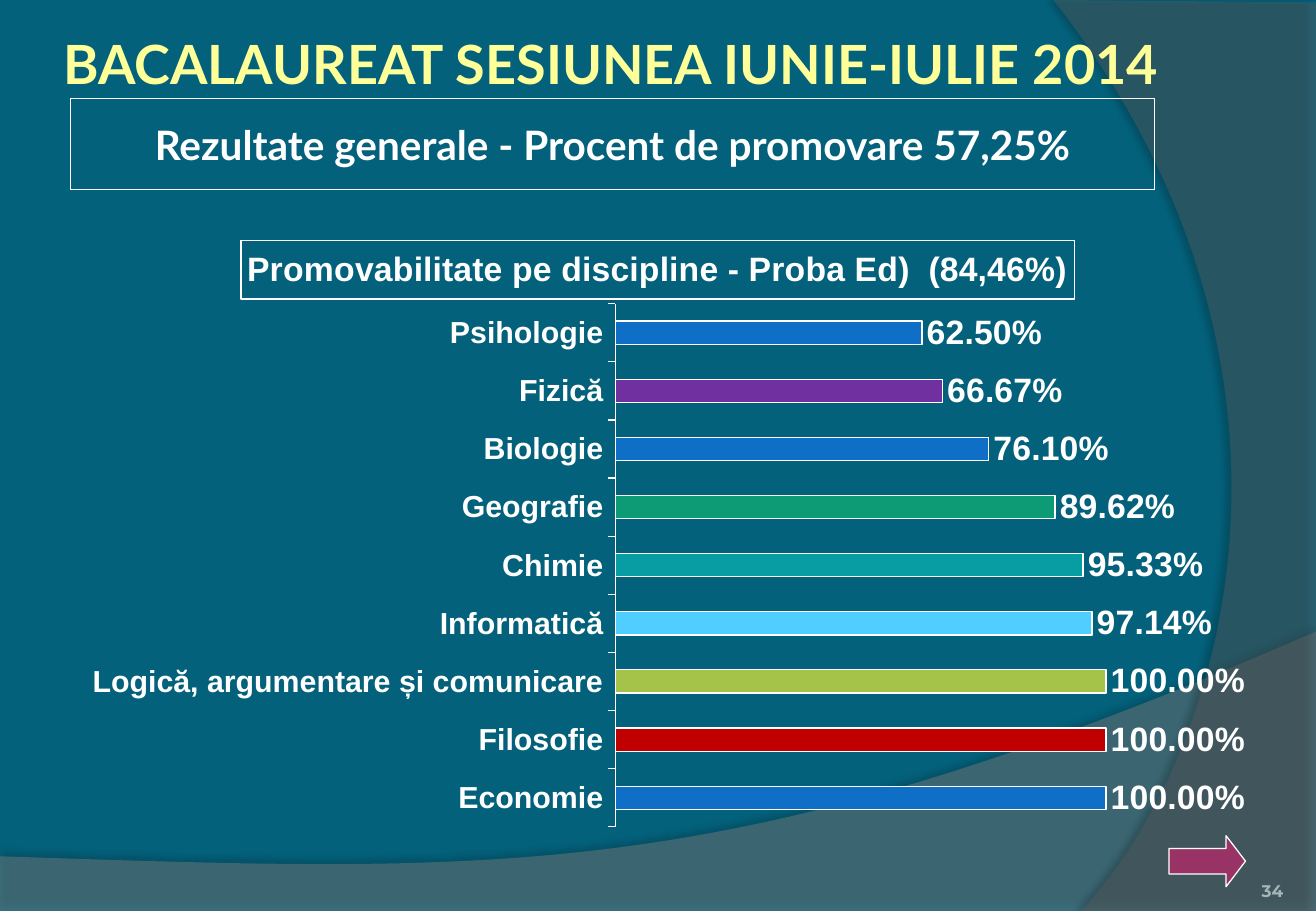
from lxml.etree import SubElement
from pptx import Presentation
from pptx.chart.data import CategoryChartData
from pptx.dml.color import RGBColor
from pptx.enum.chart import (XL_CHART_TYPE, XL_LABEL_POSITION,
                             XL_TICK_LABEL_POSITION, XL_TICK_MARK)
from pptx.enum.shapes import MSO_SHAPE
from pptx.enum.text import MSO_ANCHOR, PP_ALIGN
from pptx.oxml.ns import qn
from pptx.util import Inches, Pt

WHITE = "FFFFFF"
RESULTS = [  # subject, pass rate, bar colour
    ("Economie", 1, "0F6FC6"),
    ("Filosofie", 1, "C00000"),
    ("Logică, argumentare și comunicare", 1, "A5C249"),
    ("Informatică", 0.9714, "4FCEFF"),
    ("Chimie", 0.9533, "089CA3"),
    ("Geografie", 0.8962, "0C9B74"),
    ("Biologie", 0.761, "0F6FC6"),
    ("Fizică", 0.6667, "7030A0"),
    ("Psihologie", 0.625, "0F6FC6"),
]


def color(code):
    return RGBColor.from_string(code)


def paint(item, fill=None, line=None):
    if fill:
        item.fill.solid()
        item.fill.fore_color.rgb = color(fill)
    else:
        item.fill.background()
    if line:
        item.line.color.rgb = color(line)
        item.line.width = Pt(0.75)
    else:
        item.line.fill.background()


def style(font, size, face="Arial", bold=True, ink=WHITE):
    font.size, font.name, font.bold = Pt(size), face, bold
    font.color.rgb = color(ink)


def write(shape, text, size, face="Lato", ink=WHITE, align=PP_ALIGN.LEFT,
          anchor=MSO_ANCHOR.TOP, inset=0.05):
    frame = shape.text_frame
    frame.word_wrap = True
    frame.vertical_anchor = anchor
    frame.margin_left = frame.margin_right = Inches(inset)
    frame.margin_top = frame.margin_bottom = Inches(0.05 if inset else 0)
    para = frame.paragraphs[0]
    para.alignment = align
    run = para.add_run()
    run.text = text
    style(run.font, size, face, ink=ink)


def add_box(slide, box, kind=MSO_SHAPE.RECTANGLE, fill=None, line=None):
    shape = slide.shapes.add_shape(kind, *map(Inches, box))
    shape.shadow.inherit = False
    paint(shape, fill, line)
    return shape


def curve(a, b, c, d, steps=60):
    """Points along a cubic curve, without its start."""
    for i in range(1, steps + 1):
        t = i / steps
        u = 1 - t
        yield tuple(u**3 * p + 3 * u * u * t * q + 3 * u * t * t * r + t**3 * s
                    for p, q, r, s in zip(a, b, c, d))


def add_wave(slide, box, points, fill, alpha, shade, dist, angle):
    """Translucent outline; points are relative to the box corner."""
    left, top = box
    spots = [(Inches(left + x), Inches(top + y)) for x, y in points]
    pen = slide.shapes.build_freeform(*spots[0])
    pen.add_line_segments(spots[1:], close=True)
    shape = pen.convert_to_shape()
    shape.shadow.inherit = False
    paint(shape, fill)
    props = shape.element.spPr
    tint = props.find(qn("a:solidFill"))[0]
    SubElement(tint, qn("a:alpha"), val=str(alpha * 1000))
    cast = SubElement(props.find(qn("a:effectLst")), qn("a:outerShdw"),
                      blurRad=str(Pt(4)), dist=str(Pt(dist)),
                      dir=str(angle * 60000), algn="ctr", rotWithShape="0")
    dark = SubElement(cast, qn("a:srgbClr"), val="000000")
    SubElement(dark, qn("a:alpha"), val=str(shade * 1000))


def add_decor(slide):
    # Bottom wave
    low = [(0, 1.85), (0, 2.3), (10.83, 2.3), (10.83, 0)]
    low += curve((10.83, 0), (6.06, 2.09), (4.23, 1.99), (0, 1.85))
    add_wave(slide, (0, 5.2), low, "7F7F7F", 45, 35, 3.5, 270)
    # Right wave
    side = [(2.16, 0.02), (2.16, 7.5), (0.23, 7.5)]
    side += curve((0.23, 7.5), (1.45, 6.19), (2.35, 3), (0, 0))
    add_wave(slide, (8.67, 0), side, "5E5E5E", 40, 45, 4, 180)


def add_head(slide, left, top, width):
    title = slide.shapes.add_textbox(*map(Inches, (left, top, width, 0.63)))
    write(title, "BACALAUREAT SESIUNEA IUNIE-IULIE 2014", 32,
          ink="FFFF99", inset=0.1)
    band = add_box(slide, (left + 0.16, top + 0.61, 8.92, 0.75), line=WHITE)
    write(band, "Rezultate generale - Procent de promovare 57,25%", 24,
          align=PP_ALIGN.CENTER, anchor=MSO_ANCHOR.MIDDLE)


def set_place(parent, index, **sizes):
    """Fix a chart part at fractions of the chart area."""
    old = parent.find(qn("c:layout"))
    if old is not None:
        parent.remove(old)
    layout = SubElement(parent, qn("c:layout"))
    parent.insert(index, layout)
    place = SubElement(layout, qn("c:manualLayout"))
    if "w" in sizes:
        SubElement(place, qn("c:layoutTarget"), val="inner")
    for key in ("x", "y"):
        SubElement(place, qn(f"c:{key}Mode"), val="edge")
    for key, value in sizes.items():
        SubElement(place, qn(f"c:{key}"), val=str(value))


def add_bars(slide, box):
    names, rates, inks = zip(*RESULTS)
    data = CategoryChartData(number_format="0.00%")
    data.categories = names
    data.add_series("Series 1", rates)
    chart = slide.shapes.add_chart(XL_CHART_TYPE.BAR_CLUSTERED,
                                   *map(Inches, box), data).chart
    style(chart.font, 10, bold=False)
    chart.has_legend = False

    # Title
    chart.has_title = True
    title = chart.chart_title
    title.include_in_layout = False
    para = title.text_frame.paragraphs[0]
    run = para.add_run()
    run.text = "Promovabilitate pe discipline - Proba Ed)  (84,46%)"
    style(run.font, 20)
    paint(title.format, line=WHITE)
    set_place(title.format.element if hasattr(title.format, "element")
              else chart.element.find(".//" + qn("c:title")), 1,
              x=0.14, y=0.03)

    # Axes
    cats = chart.category_axis
    style(cats.tick_labels.font, 18)
    cats.major_tick_mark = XL_TICK_MARK.OUTSIDE
    cats.format.line.color.rgb = color(WHITE)
    rate = chart.value_axis
    rate.minimum_scale, rate.maximum_scale = 0, 1.2
    rate.has_major_gridlines = False
    rate.tick_label_position = XL_TICK_LABEL_POSITION.NONE
    rate.visible = False

    # Bars and labels
    plot = chart.plots[0]
    plot.gap_width = 150
    plot.vary_by_categories = False
    bars = plot.series[0]
    paint(bars.format, inks[0], WHITE)
    for i, ink in enumerate(inks):
        if ink != inks[0]:
            paint(bars.points[i].format, ink, WHITE)
    labels = bars.data_labels
    labels.show_value = True
    labels.position = XL_LABEL_POSITION.OUTSIDE_END
    labels.number_format = "0.00%"
    labels.number_format_is_linked = False
    style(labels.font, 20)
    set_place(chart.element.find(".//" + qn("c:plotArea")), 0,
              x=0.461, y=0.132, w=0.505, h=0.848)


def add_foot(slide, left, top):
    arrow = add_box(slide, (left, top, 0.63, 0.42), MSO_SHAPE.RIGHT_ARROW,
                    "993366", WHITE)
    arrow.adjustments[0], arrow.adjustments[1] = 0.5, 0.38
    page = slide.shapes.add_textbox(
        *map(Inches, (left + 0.04, top + 0.14, 0.9, 0.4)))
    write(page, "34", 10, "Montserrat", "A2B5B8", PP_ALIGN.RIGHT,
          MSO_ANCHOR.BOTTOM, 0)


def main():
    deck = Presentation()
    deck.slide_width, deck.slide_height = Inches(10.83), Inches(7.5)
    slide = deck.slides.add_slide(deck.slide_layouts[6])
    slide.background.fill.solid()
    slide.background.fill.fore_color.rgb = color("04617B")
    add_decor(slide)
    add_head(slide, 0.42, 0.2, 10.15)
    add_bars(slide, (0.64, 1.83, 9.61, 5.08))
    add_foot(slide, 9.62, 6.88)
    deck.save("out.pptx")


if __name__ == "__main__":
    main()
